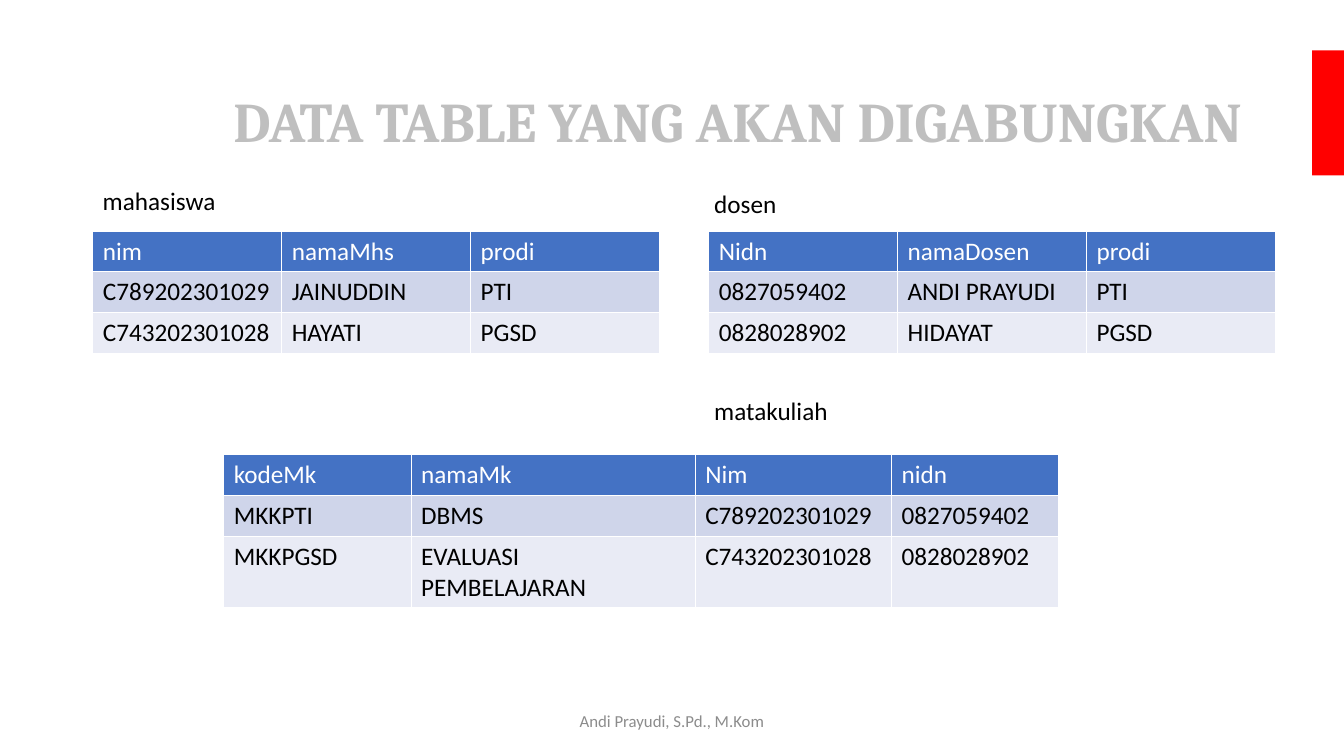
from pptx import Presentation
from pptx.dml.color import RGBColor
from pptx.enum import shapes, text
from pptx.util import Cm, Pt

TITLE = "DATA TABLE YANG AKAN DIGABUNGKAN"
AUTHOR = "Andi Prayudi, S.Pd., M.Kom"

# Positions and column widths are in cm
TABLES = [
    dict(name="mahasiswa", name_at=(2.34, 4.55), at=(2.34, 5.82),
         widths=[4.76] * 3,
         rows=[("nim", "namaMhs", "prodi"),
               ("C789202301029", "JAINUDDIN", "PTI"),
               ("C743202301028", "HAYATI", "PGSD")]),
    dict(name="dosen", name_at=(17.75, 4.62), at=(17.86, 5.82),
         widths=[4.76] * 3,
         rows=[("Nidn", "namaDosen", "prodi"),
               ("0827059402", "ANDI PRAYUDI", "PTI"),
               ("0828028902", "HIDAYAT", "PGSD")]),
    dict(name="matakuliah", name_at=(17.75, 9.83), at=(5.64, 11.46),
         widths=[4.72, 7.16, 4.95, 4.2],
         rows=[("kodeMk", "namaMk", "Nim", "nidn"),
               ("MKKPTI", "DBMS", "C789202301029", "0827059402"),
               ("MKKPGSD", "EVALUASI PEMBELAJARAN", "C743202301028", "0828028902")]),
]
ROW_HEIGHT = 1.03
ROW_FILLS = ["4472C4", "CFD5EA", "E9EBF5"]
WHITE, BLACK = "FFFFFF", "000000"


def paint(fill, color):
    fill.solid()
    fill.fore_color.rgb = RGBColor.from_string(color)


def write(frame, words, size, color, font="Calibri", bold=False, align=None):
    paragraph = frame.paragraphs[0]
    paragraph.alignment = align
    run = paragraph.add_run()
    run.text = words
    run.font.name, run.font.size, run.font.bold = font, Pt(size), bold
    run.font.color.rgb = RGBColor.from_string(color)
    return paragraph


def add_label(slide, words, box, size, color, align=None):
    label = slide.shapes.add_textbox(*map(Cm, box)).text_frame
    label.word_wrap = True
    write(label, words, size, color, align=align)
    return label


def add_data_table(slide, data):
    rows, widths = data["rows"], data["widths"]
    size = sum(widths), ROW_HEIGHT * len(rows)
    table = slide.shapes.add_table(
        len(rows), len(widths), *map(Cm, data["at"] + size)).table
    for column, width in zip(table.columns, widths):
        column.width = Cm(width)
    for r, values in enumerate(rows):
        table.rows[r].height = Cm(ROW_HEIGHT)
        for c, value in enumerate(values):
            cell = table.cell(r, c)
            paint(cell.fill, ROW_FILLS[r])
            write(cell.text_frame, value, 18, BLACK if r else WHITE)


def main():
    deck = Presentation()
    deck.slide_width, deck.slide_height = Cm(33.87), Cm(19.05)
    slide = deck.slides.add_slide(deck.slide_layouts[5])

    title = slide.shapes.title
    title.left, title.top, title.width, title.height = map(Cm, (2.34, 1.02, 29.21, 3.68))
    title.text_frame.vertical_anchor = text.MSO_ANCHOR.MIDDLE
    heading = write(title.text_frame, TITLE, 40, "BFBFBF", "Cambria", True,
                    text.PP_ALIGN.RIGHT)
    heading.line_spacing = 1.2

    accent = slide.shapes.add_shape(
        shapes.MSO_SHAPE.RECTANGLE, *map(Cm, (33.07, 1.27, 1.63, 3.15)))
    accent.shadow.inherit = False
    paint(accent.fill, "FF0000")
    accent.line.fill.background()

    footer = add_label(slide, AUTHOR, (11.22, 17.66, 11.43, 1.01), 12, "8C8C8C",
                       text.PP_ALIGN.CENTER)
    footer.vertical_anchor = text.MSO_ANCHOR.MIDDLE

    for data in TABLES:
        add_data_table(slide, data)
        name = add_label(slide, data["name"], data["name_at"] + (8.89, 1.03), 18, BLACK)
        name.auto_size = text.MSO_AUTO_SIZE.SHAPE_TO_FIT_TEXT

    deck.save("out.pptx")


if __name__ == "__main__":
    main()
